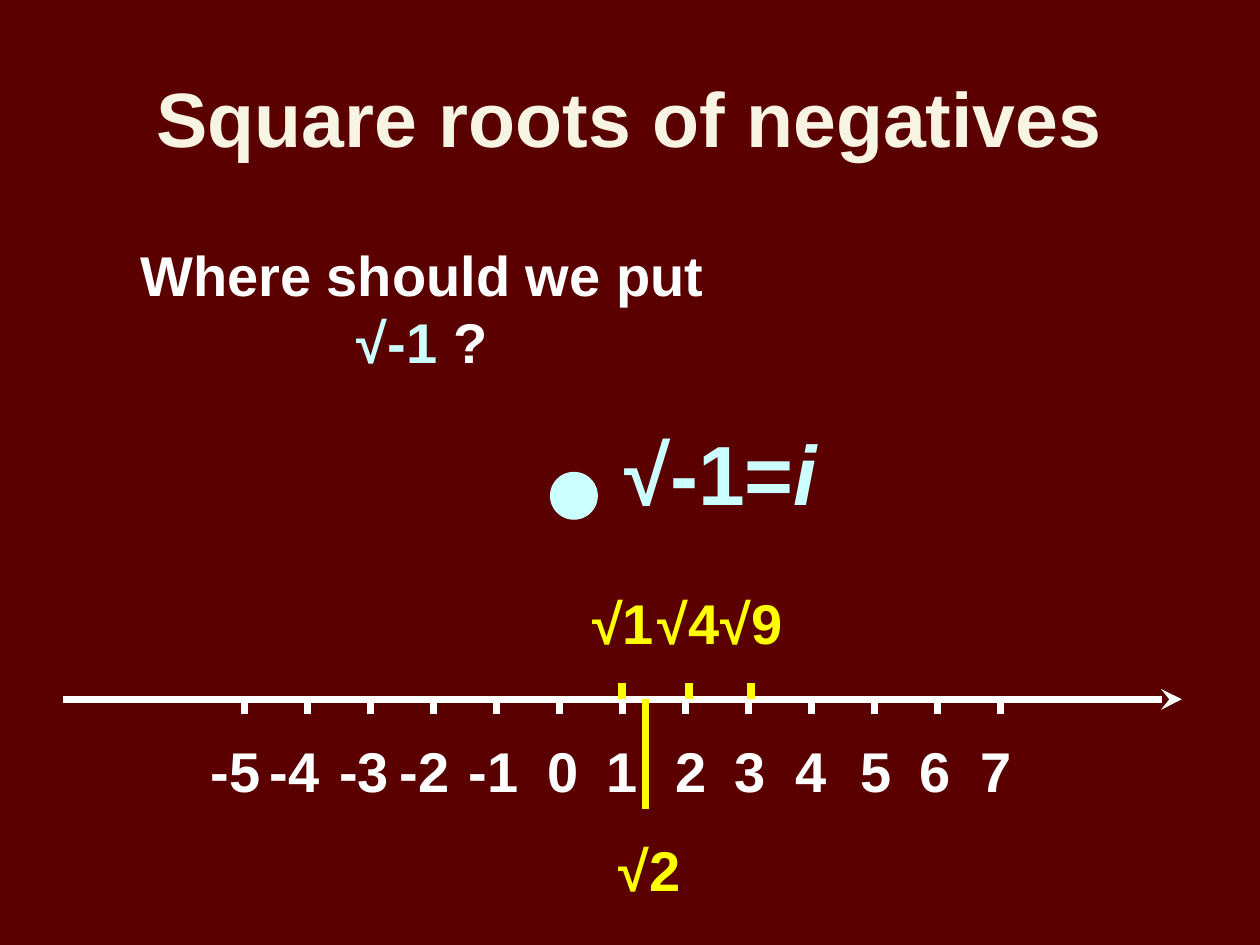
"""Build a slide that places square roots on and off the number line."""
from lxml import etree
from pptx import Presentation
from pptx.dml.color import RGBColor
from pptx.enum.shapes import MSO_CONNECTOR, MSO_SHAPE
from pptx.enum.text import MSO_ANCHOR, MSO_AUTO_SIZE, PP_ALIGN
from pptx.oxml.ns import qn
from pptx.util import Inches, Pt

STRAIGHT = MSO_CONNECTOR.STRAIGHT
OVAL = MSO_SHAPE.OVAL
MIDDLE, TOP = MSO_ANCHOR.MIDDLE, MSO_ANCHOR.TOP
GROW, FIXED = MSO_AUTO_SIZE.SHAPE_TO_FIT_TEXT, MSO_AUTO_SIZE.NONE
CENTER = PP_ALIGN.CENTER

COLORS = {
    "background": "5A0000",
    "title": "F7F4E3",
    "text": "FFFFFF",
    "imaginary": "CCFFFF",
    "root": "FFFF00",
}
FONT = "Arial"

TITLE = [("Square roots of negatives", "title", False)]
QUESTION = [
    ("Where should we put\v", "text", False),
    ("√-1", "imaginary", False),
    (" ?", "text", False),
]
FORMULA = [("√-1=", "imaginary", False), ("i", "imaginary", True)]

FIRST_NUMBER = -5
NUMBER_LEFTS = [1.57, 2.04, 2.59, 3.07, 3.62, 4.24, 4.71, 5.26, 5.73, 6.21, 6.73, 7.2, 7.68]
ROOTS = [
    {"text": "√1", "label": (4.6, 4.62), "x": 4.94, "ends": (5.42, 5.55), "width": 4.5},
    {"text": "√4", "label": (5.12, 4.62), "x": 5.47, "ends": (5.42, 5.55), "width": 4.5},
    {"text": "√9", "label": (5.62, 4.62), "x": 5.96, "ends": (5.42, 5.55), "width": 4.5},
    {"text": "√2", "label": (4.81, 6.58), "x": 5.12, "ends": (5.55, 6.42), "width": 4},
]
ZERO_X, UNIT = 4.44, 0.5
AXIS_LEFT, AXIS_RIGHT, AXIS_Y = 0.5, 9.38, 5.55
TICK_BOTTOM, NUMBER_TOP = 5.67, 5.8
LABEL_HEIGHT = 0.63


def rgb(name):
    return RGBColor.from_string(COLORS[name])


def add_text(page, spans, place, size=32, wrap=False, anchor=TOP, fit=GROW):
    box = page.shapes.add_textbox(*map(Inches, place))
    frame_format = {"word_wrap": wrap, "auto_size": fit, "vertical_anchor": anchor}
    for name, value in frame_format.items():
        setattr(box.text_frame, name, value)
    para = box.text_frame.paragraphs[0]
    para.alignment = CENTER
    for text, color, italic in spans:
        words, *broken = text.split("\v")
        span = para.add_run()
        span.text = words
        font_format = {"name": FONT, "size": Pt(size), "bold": True, "italic": italic}
        for name, value in font_format.items():
            setattr(span.font, name, value)
        span.font.color.rgb = rgb(color)
        if broken:
            para.add_line_break()


def add_line(page, start, end, color, width=4, arrow=None):
    line = page.shapes.add_connector(STRAIGHT, *map(Inches, start + end))
    line.line.color.rgb = rgb(color)
    line.line.width = Pt(width)
    if arrow:
        etree.SubElement(line.line._get_or_add_ln(), qn("a:tailEnd"), type=arrow)
    etree.SubElement(line._element.spPr, qn("a:effectLst"))


def add_point(page, place, color):
    point = page.shapes.add_shape(OVAL, *map(Inches, place))
    point.shadow.inherit = False
    point.fill.solid()
    point.fill.fore_color.rgb = rgb(color)
    point.line.color.rgb = rgb(color)
    point.line.width = Pt(0.75)


def add_number_line(page):
    add_line(page, (AXIS_LEFT, AXIS_Y), (AXIS_RIGHT, AXIS_Y), "text", arrow="stealth")
    for number, left in enumerate(NUMBER_LEFTS, FIRST_NUMBER):
        x = ZERO_X + number * UNIT
        width = 0.6 if number < 0 else 0.45
        add_line(page, (x, AXIS_Y), (x, TICK_BOTTOM), "text")
        add_text(page, [(str(number), "text", False)], (left, NUMBER_TOP, width, LABEL_HEIGHT))


def add_roots(page):
    for root in ROOTS:
        start, end = root["ends"]
        add_line(page, (root["x"], start), (root["x"], end), "root", root["width"])
        add_text(page, [(root["text"], "root", False)], (*root["label"], 0.69, LABEL_HEIGHT))


def main():
    deck = Presentation()
    deck.slide_width, deck.slide_height = Inches(10), Inches(7.5)
    page = deck.slides.add_slide(deck.slide_layouts[6])
    page.background.fill.solid()
    page.background.fill.fore_color.rgb = rgb("background")

    add_text(page, TITLE, (0.5, 0.3, 9, 1.25), 44, True, MIDDLE, FIXED)
    add_text(page, FORMULA, (3.98, 3.3, 3.48, 0.9), 48, True)
    add_point(page, (4.37, 3.75, 0.37, 0.37), "imaginary")
    add_text(page, QUESTION, (0.44, 1.86, 5.82, LABEL_HEIGHT), wrap=True)
    add_number_line(page)
    add_roots(page)
    deck.save("out.pptx")


if __name__ == "__main__":
    main()
